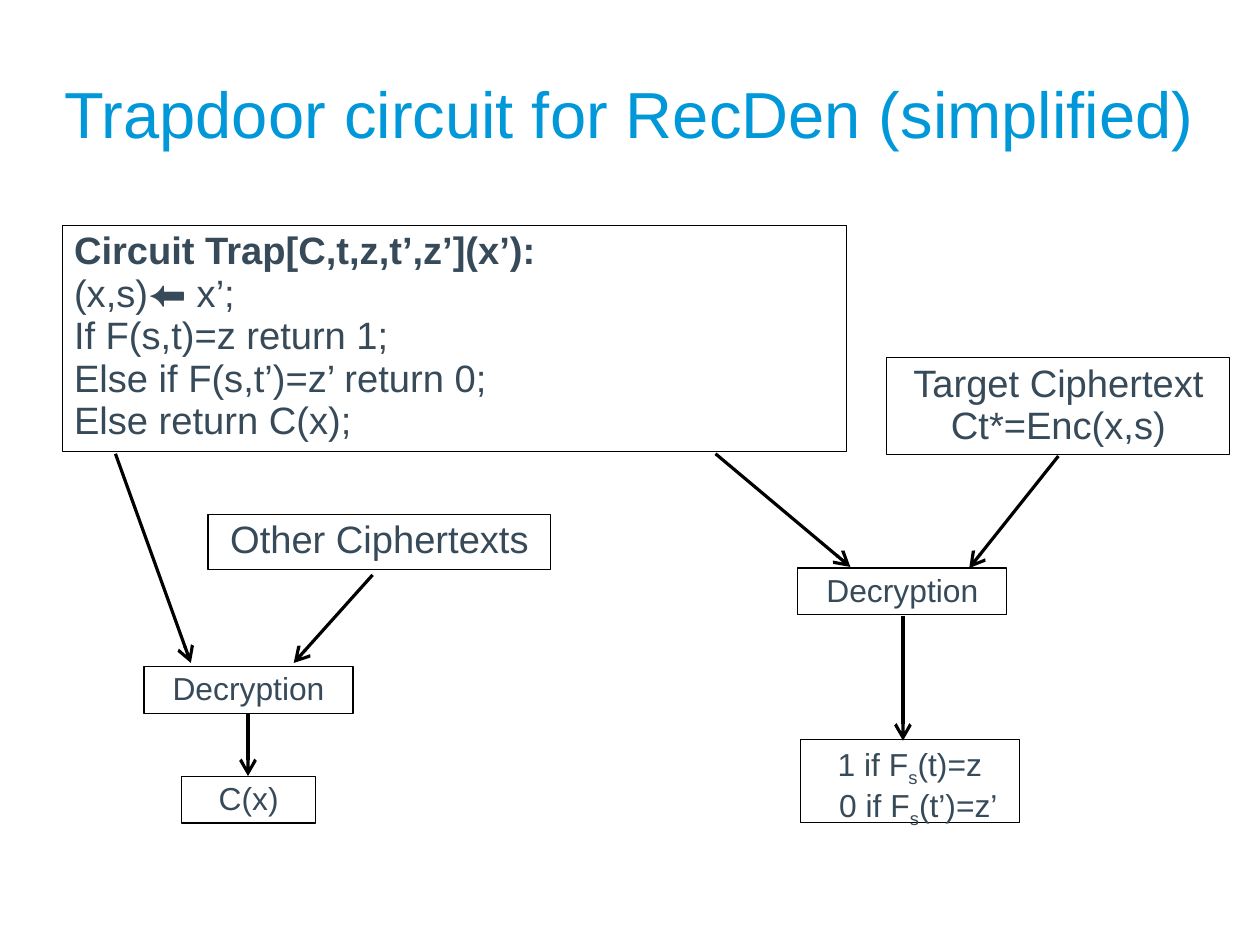
from lxml.etree import SubElement
from pptx import Presentation
from pptx.dml.color import RGBColor
from pptx.enum.shapes import MSO_CONNECTOR, MSO_SHAPE
from pptx.enum.text import MSO_ANCHOR, MSO_AUTO_SIZE, PP_ALIGN
from pptx.oxml.ns import qn
from pptx.util import Inches, Pt

TITLE_BLUE = RGBColor(0x00, 0x98, 0xD8)
SLATE = RGBColor(0x37, 0x4A, 0x59)
BLACK = RGBColor(0x00, 0x00, 0x00)
CM_PER_INCH = 2.54

TRAPDOOR_CODE = [
    "(x,s)⬅ x’;",
    "If F(s,t)=z return 1;",
    "Else if F(s,t’)=z’ return 0;",
    "Else return C(x);",
]
ARROWS = [
    ((1.01, 3.97), (1.67, 5.8)),
    ((3.26, 5.03), (2.57, 5.8)),
    ((2.17, 6.25), (2.17, 6.79)),
    ((6.26, 3.97), (7.44, 4.96)),
    ((9.26, 3.99), (8.48, 4.97)),
    ((7.9, 5.39), (7.9, 6.48)),
]


def write(paragraph, text, size=20, color=SLATE, bold=False,
          align=PP_ALIGN.CENTER, indent=0):
    """Fill a paragraph with formatted text; parts between bars are subscripts."""
    paragraph.alignment = align
    paragraph.line_spacing = 0.93
    if indent:
        paragraph._p.get_or_add_pPr().set("marL", str(Inches(indent)))
    for index, part in enumerate(text.split("|")):
        run = paragraph.add_run()
        run.text = part
        run.font.name = "Arial"
        run.font.size = Pt(size)
        run.font.bold = bold
        run.font.color.rgb = color
        if index % 2:
            run._r.get_or_add_rPr().set("baseline", "-25000")


def add_title(slide, text):
    """Place and fill the title placeholder."""
    title = slide.shapes.title
    title.left, title.top = Inches(0.55), Inches(0.33)
    title.width, title.height = Inches(9.92), Inches(1.38)
    frame = title.text_frame
    frame.margin_left = frame.margin_right = 0
    frame.margin_top = frame.margin_bottom = 0
    frame.vertical_anchor = MSO_ANCHOR.MIDDLE
    frame.auto_size = MSO_AUTO_SIZE.NONE
    frame.word_wrap = True
    write(frame.paragraphs[0], text, size=41, color=TITLE_BLUE)


def add_box(slide, left, top, width, height, text, **text_format):
    """Add an outlined box with its first paragraph and return its text frame."""
    shape = slide.shapes.add_shape(MSO_SHAPE.RECTANGLE, Inches(left), Inches(top),
                                   Inches(width), Inches(height))
    shape.shadow.inherit = False
    shape.fill.background()
    shape.line.color.rgb = BLACK
    shape.line.width = Pt(0.75)
    frame = shape.text_frame
    frame.word_wrap = True
    frame.vertical_anchor = MSO_ANCHOR.TOP
    write(frame.paragraphs[0], text, **text_format)
    return frame


def add_arrow(slide, start, end):
    """Add a straight arrow between two points."""
    points = [Inches(value) for value in (*start, *end)]
    arrow = slide.shapes.add_connector(MSO_CONNECTOR.STRAIGHT, *points)
    arrow.line.color.rgb = BLACK
    arrow.line.width = Pt(2)
    SubElement(arrow.line._get_or_add_ln(), qn("a:tailEnd"),
               type="arrow", w="lg", len="lg")
    SubElement(arrow._element.spPr, qn("a:effectLst"))


def main():
    """Build the trapdoor circuit slide and save it."""
    presentation = Presentation()
    presentation.slide_width = Inches(28 / CM_PER_INCH)
    presentation.slide_height = Inches(21 / CM_PER_INCH)
    slide = presentation.slides.add_slide(presentation.slide_layouts[5])

    add_title(slide, "Trapdoor circuit for RecDen (simplified)")
    circuit = add_box(slide, 0.55, 1.97, 6.86, 1.98, "Circuit Trap[C,t,z,t’,z’](x’):",
                      size=24, bold=True, align=PP_ALIGN.LEFT)
    for line in TRAPDOOR_CODE:
        write(circuit.add_paragraph(), line, size=24, align=PP_ALIGN.LEFT)

    add_box(slide, 7.76, 3.13, 3, 0.85, "Target Ciphertext Ct*=Enc(x,s)", size=24)
    add_box(slide, 1.82, 4.5, 3, 0.48, "Other Ciphertexts", size=24)
    for left, top in ((1.26, 5.83), (6.98, 4.97)):
        add_box(slide, left, top, 1.83, 0.41, "Decryption")
    add_box(slide, 1.59, 6.79, 1.17, 0.41, "C(x)")
    result = add_box(slide, 7, 6.47, 1.92, 0.73, "1 if F|s|(t)=z")
    write(result.add_paragraph(), "0 if F|s|(t’)=z’", indent=0.15)

    for start, end in ARROWS:
        add_arrow(slide, start, end)
    presentation.save("out.pptx")


if __name__ == "__main__":
    main()
